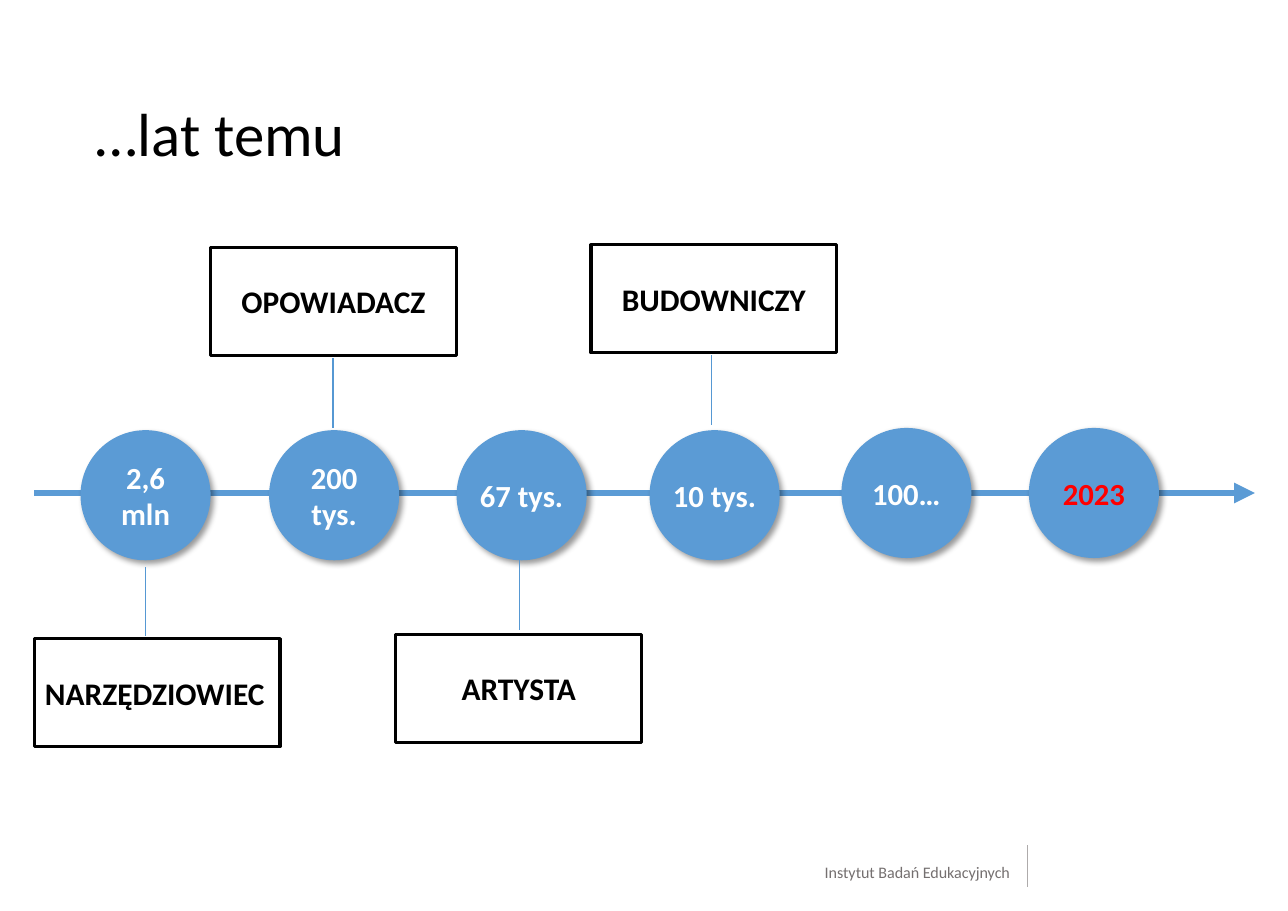
"""Build a timeline slide of human roles through the ages."""
from dataclasses import dataclass

import lxml.etree
import pptx
import pptx.dml.color
import pptx.enum.shapes
import pptx.enum.text
import pptx.oxml.ns
import pptx.util

Inches = pptx.util.Inches
Pt = pptx.util.Pt
Align = pptx.enum.text.PP_ALIGN
Anchor = pptx.enum.text.MSO_ANCHOR
Preset = pptx.enum.shapes.MSO_SHAPE
qn = pptx.oxml.ns.qn

FONT = "Calibri"
BLUE = "5B9BD5"
STEM_BLUE = "5698D3"
DIAMETER = 1.18
ROLE_WIDTH, ROLE_HEIGHT = 2.23, 0.98
STEM_LENGTH = 0.63


@dataclass(frozen=True)
class Era:
    label: str
    left: float
    top: float = 3.9
    color: str = "FFFFFF"


@dataclass(frozen=True)
class Role:
    label: str
    left: float
    top: float
    stem_x: float
    stem_top: float
    align: Align = Align.CENTER


ERAS = [
    Era("2,6 mln", 0.73),
    Era("200 tys.", 2.44),
    Era("67 tys.", 4.14),
    Era("10 tys.", 5.89),
    Era("100…", 7.63, 3.88),
    Era("2023", 9.33, 3.88, "FF0000"),
]
ROLES = [
    Role("NARZĘDZIOWIEC", 0.31, 5.79, 1.32, 5.14, Align.LEFT),
    Role("OPOWIADACZ", 1.91, 2.24, 3.02, 3.25),
    Role("ARTYSTA", 3.59, 5.75, 4.71, 5.08),
    Role("BUDOWNICZY", 5.36, 2.22, 6.45, 3.22),
]


def rgb(value: str) -> pptx.dml.color.RGBColor:
    """Turn a hex string into a colour."""
    return pptx.dml.color.RGBColor.from_string(value)


def write(shape, text: str, size: float, color: str, align: Align,
          anchor: Anchor = Anchor.MIDDLE, bold: bool = False,
          inset: tuple[float, float] = (0, 0)) -> None:
    """Fill a shape with one formatted paragraph."""
    frame = shape.text_frame
    frame.word_wrap = True
    frame.vertical_anchor = anchor
    frame.margin_left = frame.margin_right = Inches(inset[0])
    frame.margin_top = frame.margin_bottom = Inches(inset[1])
    frame.text = text
    paragraph = frame.paragraphs[0]
    paragraph.alignment = align
    font = paragraph.runs[0].font
    font.name, font.size, font.bold = FONT, Pt(size), bold
    font.color.rgb = rgb(color)


def draw_line(slide, start: tuple[float, float], end: tuple[float, float],
              color: str, width: float, arrow: bool = False) -> None:
    """Draw a flat straight line, optionally with an arrowhead at its end."""
    line = slide.shapes.add_connector(
        pptx.enum.shapes.MSO_CONNECTOR.STRAIGHT,
        *map(Inches, start), *map(Inches, end))
    line.line.color.rgb = rgb(color)
    line.line.width = Pt(width)
    properties = line._element.spPr
    if arrow:
        lxml.etree.SubElement(properties.find(qn("a:ln")), qn("a:tailEnd"), type="triangle")
    lxml.etree.SubElement(properties, qn("a:effectLst"))


def add_soft_shadow(shape) -> None:
    """Cast a translucent black shadow to the lower right."""
    effects = shape._element.spPr.find(qn("a:effectLst"))
    shadow = lxml.etree.SubElement(
        effects, qn("a:outerShdw"), blurRad=str(Pt(4)), dist=str(Pt(3)),
        dir="2700000", algn="tl", rotWithShape="0")
    tint = lxml.etree.SubElement(shadow, qn("a:srgbClr"), val="000000")
    lxml.etree.SubElement(tint, qn("a:alpha"), val="40000")


def draw_era(slide, era: Era) -> None:
    """Draw a dated circle on the time axis."""
    circle = slide.shapes.add_shape(
        Preset.OVAL, *map(Inches, (era.left, era.top, DIAMETER, DIAMETER)))
    circle.fill.solid()
    circle.fill.fore_color.rgb = rgb(BLUE)
    circle.line.fill.background()
    circle.shadow.inherit = False
    add_soft_shadow(circle)
    write(circle, era.label, 20, era.color, Align.CENTER, bold=True)


def draw_role(slide, role: Role) -> None:
    """Draw a framed role and the stem leading to its era."""
    draw_line(slide, (role.stem_x, role.stem_top),
              (role.stem_x, role.stem_top + STEM_LENGTH), STEM_BLUE, 0.75)
    frame = slide.shapes.add_shape(
        Preset.RECTANGLE, *map(Inches, (role.left, role.top, ROLE_WIDTH, ROLE_HEIGHT)))
    frame.fill.solid()
    frame.fill.fore_color.rgb = rgb("FFFFFF")
    frame.line.color.rgb = rgb("000000")
    frame.line.width = Pt(2)
    frame.shadow.inherit = False
    write(frame, role.label, 20.5, "000000", role.align, bold=True, inset=(0.1, 0.05))


def main() -> None:
    """Assemble and save the slide."""
    deck = pptx.Presentation()
    deck.slide_width, deck.slide_height = Inches(11.68), Inches(8.26)
    slide = deck.slides.add_slide(deck.slide_layouts[6])

    institute = slide.shapes.add_textbox(*map(Inches, (7.21, 7.82, 1.95, 0.21)))
    write(institute, "Instytut Badań Edukacyjnych", 10.5, "757070", Align.RIGHT, Anchor.TOP)
    draw_line(slide, (9.32, 8.04), (9.32, 7.66), "AEABAB", 0.75)

    heading = slide.shapes.add_textbox(*map(Inches, (0.8, 0.44, 10.07, 1.6)))
    write(heading, "…lat temu", 39.7, "000000", Align.LEFT, inset=(0.07, 0.04))
    heading.text_frame.paragraphs[0].line_spacing = 0.9

    draw_line(slide, (0.31, 4.47), (11.38, 4.47), BLUE, 4.5, arrow=True)
    for era in ERAS:
        draw_era(slide, era)
    for role in ROLES:
        draw_role(slide, role)

    deck.save("out.pptx")


if __name__ == "__main__":
    main()
